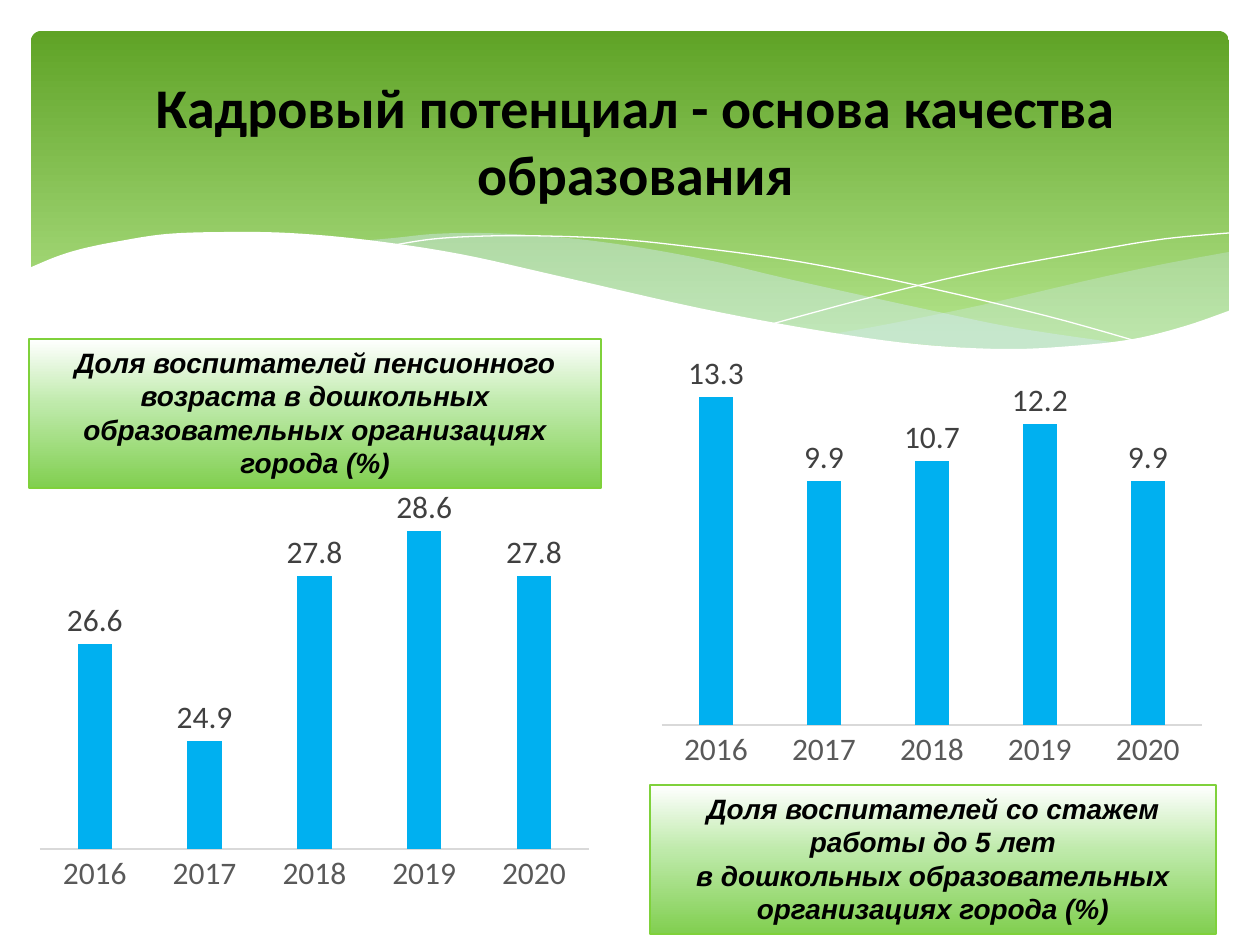
"""Build the slide on teaching staff: a green wave banner, two captions and two column charts."""
from lxml.etree import SubElement
from pptx import Presentation
from pptx.chart.data import CategoryChartData
from pptx.dml.color import RGBColor
from pptx.enum.chart import XL_CHART_TYPE as Kind, XL_LABEL_POSITION as Place, XL_TICK_MARK as Tick
from pptx.enum.shapes import MSO_SHAPE as Preset
from pptx.enum.text import MSO_ANCHOR as Anchor, MSO_AUTO_SIZE as Fit, PP_ALIGN as Align
from pptx.oxml import parse_xml
from pptx.oxml.ns import nsdecls, qn
from pptx.util import Pt

SCALE = 914400 / 126
COLORS = {
    "text": "000000", "white": "FFFFFF", "haze": "D6ECFF", "edge": "7FD13B",
    "bar": "00B0F0", "axis": "D9D9D9", "category": "595959", "label": "404040",
}
BANNER = [(0, "5FA326"), (90, "B2E389")]
CAPTION = [(0, "FFFFFF"), (44, "BEEAAA"), (100, "81CF50")]
TITLE_FONT = {"name": "Calibri", "size": Pt(32), "bold": True}
CAPTION_FONT = {"name": "Arial", "size": Pt(16), "bold": True, "italic": True}
CHART_FONT = {"name": "Calibri", "size": Pt(18)}

TITLE = "Кадровый потенциал - основа качества образования"
CAPTIONS = [
    ((29, 339, 572, 149),
     ["Доля воспитателей пенсионного возраста в дошкольных образовательных организациях города (%)"]),
    ((650, 785, 566, 149),
     ["Доля воспитателей со стажем работы до 5 лет",
      "в дошкольных образовательных организациях города (%)"]),
]
YEARS = ["2016", "2017", "2018", "2019", "2020"]
CHARTS = [
    {"frame": (29, 488, 572, 411), "plot": (40, 507, 549, 342), "range": (23, 29),
     "values": [26.6, 24.9, 27.8, 28.6, 27.8]},
    {"frame": (650, 354, 563, 422), "plot": (662, 378, 540, 347), "range": (0, 14),
     "values": [13.3, 9.9, 10.7, 12.2, 9.9]},
]
HAZES = [
    (29, [[(1229, 252), (1159, 265), (1085, 281), (982, 305), (889, 324), (833, 334)],
          [(833, 334), (888, 341), (954, 347), (1012, 350), (1076, 348), (1130, 341),
           (1178, 331), (1229, 311)]]),
    (40, [[(1125, 344), (1017, 328), (934, 311), (793, 280), (717, 262), (649, 249),
           (586, 240), (529, 235), (479, 233), (433, 234), (394, 238), (360, 241)],
          [(360, 241), (431, 251), (509, 266), (566, 280), (713, 312), (799, 329),
           (876, 340), (943, 347), (1003, 350), (1068, 350), (1125, 344)]]),
]
CRESTS = [
    [(389, 246), (433, 239), (487, 236), (545, 236), (616, 239), (701, 248), (801, 262),
     (916, 285), (1047, 316), (1143, 343)],
    [(772, 324), (876, 296), (978, 272), (1091, 251), (1164, 239), (1229, 233)],
]
WAVE = [
    [(1231, 310), (1185, 326), (1133, 339), (1072, 346), (1003, 349), (915, 344), (816, 330),
     (699, 308), (563, 277), (460, 254), (368, 240), (290, 233), (223, 232), (166, 234),
     (120, 241), (85, 248), (58, 256), (29, 268)],
    [(29, 415), (1231, 415)],
]


def px(*lengths):
    return [round(length * SCALE) for length in lengths]


def color(name):
    return RGBColor.from_string(COLORS[name])


def style(font, formats, name):
    for key, value in formats.items():
        setattr(font, key, value)
    font.color.rgb = color(name)


def smooth(knots, steps=6):
    """Return points on a Catmull-Rom curve through the knots."""
    if len(knots) < 3:
        return knots
    ends = [knots[0], *knots, knots[-1]]
    points = [knots[0]]
    for quad in zip(ends, ends[1:], ends[2:], ends[3:]):
        for step in range(1, steps + 1):
            t = step / steps
            points.append(tuple(
                b + t * (c - a) / 2 + t * t * (2 * a - 5 * b + 4 * c - d) / 2
                + t ** 3 * (3 * b - a - 3 * c + d) / 2 for a, b, c, d in zip(*quad)))
    return points


def add_curve(page, parts, closed):
    points = [px(*point) for part in parts for point in smooth(part)]
    builder = page.shapes.build_freeform(*points[0], scale=1.0)
    builder.add_line_segments(points[1:], close=closed)
    shape = builder.convert_to_shape()
    shape.shadow.inherit = False
    if closed:
        shape.line.fill.background()
    else:
        shape.fill.background()
        shape.line.color.rgb = color("white")
        shape.line.width = Pt(0)
    return shape


def add_gradient_box(page, preset, frame, stops):
    box = page.shapes.add_shape(preset, *px(*frame))
    box.shadow.inherit = False
    box.line.fill.background()
    box.fill.gradient()
    box.fill.gradient_angle = 270
    stop_list = box.element.spPr.find(".//" + qn("a:gsLst"))
    stop_list.clear()
    for position, value in stops:
        stop = SubElement(stop_list, qn("a:gs"), pos=str(position * 1000))
        SubElement(stop, qn("a:srgbClr"), val=value)
    return box


def add_banner(page):
    banner = add_gradient_box(page, Preset.ROUNDED_RECTANGLE, (31, 31, 1198, 340), BANNER)
    banner.adjustments[0] = 0.03
    for opacity, parts in HAZES:
        haze = add_curve(page, parts, True)
        haze.fill.solid()
        haze.fill.fore_color.rgb = color("haze")
        tint = haze.element.spPr.find(".//" + qn("a:srgbClr"))
        SubElement(tint, qn("a:alpha"), val=str(opacity * 1000))
    for crest in CRESTS:
        add_curve(page, [crest], False)
    wave = add_curve(page, WAVE, True)
    wave.fill.solid()
    wave.fill.fore_color.rgb = color("white")


def write(frame, lines, formats):
    frame.word_wrap = True
    for index, line in enumerate(lines):
        para = frame.add_paragraph() if index else frame.paragraphs[0]
        para.alignment = Align.CENTER
        span = para.add_run()
        span.text = line
        style(span.font, formats, "text")


def add_title(page):
    title = page.shapes.title
    title.left, title.top, title.width, title.height = px(35, 45, 1201, 189)
    title.text_frame.vertical_anchor = Anchor.MIDDLE
    write(title.text_frame, [TITLE], TITLE_FONT)
    title.element.getparent().append(title.element)


def add_caption(page, frame, lines):
    box = add_gradient_box(page, Preset.RECTANGLE, frame, CAPTION)
    box.line.color.rgb = color("edge")
    box.line.width = Pt(0.75)
    box.text_frame.vertical_anchor = Anchor.TOP
    box.text_frame.auto_size = Fit.SHAPE_TO_FIT_TEXT
    write(box.text_frame, lines, CAPTION_FONT)


def place_plot(chart, frame, plot):
    left, top, width, height = frame
    shares = {"x": (plot[0] - left) / width, "y": (plot[1] - top) / height,
              "w": plot[2] / width, "h": plot[3] / height}
    modes = '<c:layoutTarget val="inner"/><c:xMode val="edge"/><c:yMode val="edge"/>'
    sizes = "".join(f'<c:{key} val="{share:.4f}"/>' for key, share in shares.items())
    area = chart.element.find(".//" + qn("c:plotArea"))
    for old in area.findall(qn("c:layout")):
        area.remove(old)
    area.insert(0, parse_xml(f'<c:layout {nsdecls("c")}><c:manualLayout>{modes}{sizes}'
                             '</c:manualLayout></c:layout>'))


def add_columns(page, item):
    data = CategoryChartData(number_format="0.0")
    data.categories = YEARS
    data.add_series("Series 1", item["values"])
    chart = page.shapes.add_chart(Kind.COLUMN_CLUSTERED, *px(*item["frame"]), data).chart
    chart.has_legend = chart.has_title = False
    style(chart.font, {"name": "Calibri", "size": Pt(10)}, "text")
    values, years = chart.value_axis, chart.category_axis
    values.minimum_scale, values.maximum_scale = item["range"]
    values.has_major_gridlines = values.visible = False
    years.major_tick_mark = years.minor_tick_mark = Tick.NONE
    years.format.line.color.rgb = color("axis")
    years.format.line.width = Pt(0.75)
    style(years.tick_labels.font, CHART_FONT, "category")
    plot = chart.plots[0]
    plot.gap_width, plot.overlap, plot.vary_by_categories = 219, -27, False
    fill = plot.series[0].format.fill
    fill.solid()
    fill.fore_color.rgb = color("bar")
    plot.has_data_labels = True
    labels = plot.data_labels
    labels.show_value, labels.position = True, Place.OUTSIDE_END
    style(labels.font, CHART_FONT, "label")
    place_plot(chart, item["frame"], item["plot"])


def main():
    deck = Presentation()
    deck.slide_width, deck.slide_height = px(1260, 945)
    page = deck.slides.add_slide(deck.slide_layouts[5])
    add_banner(page)
    add_title(page)
    for frame, lines in CAPTIONS:
        add_caption(page, frame, lines)
    for item in CHARTS:
        add_columns(page, item)
    deck.save("out.pptx")


if __name__ == "__main__":
    main()
